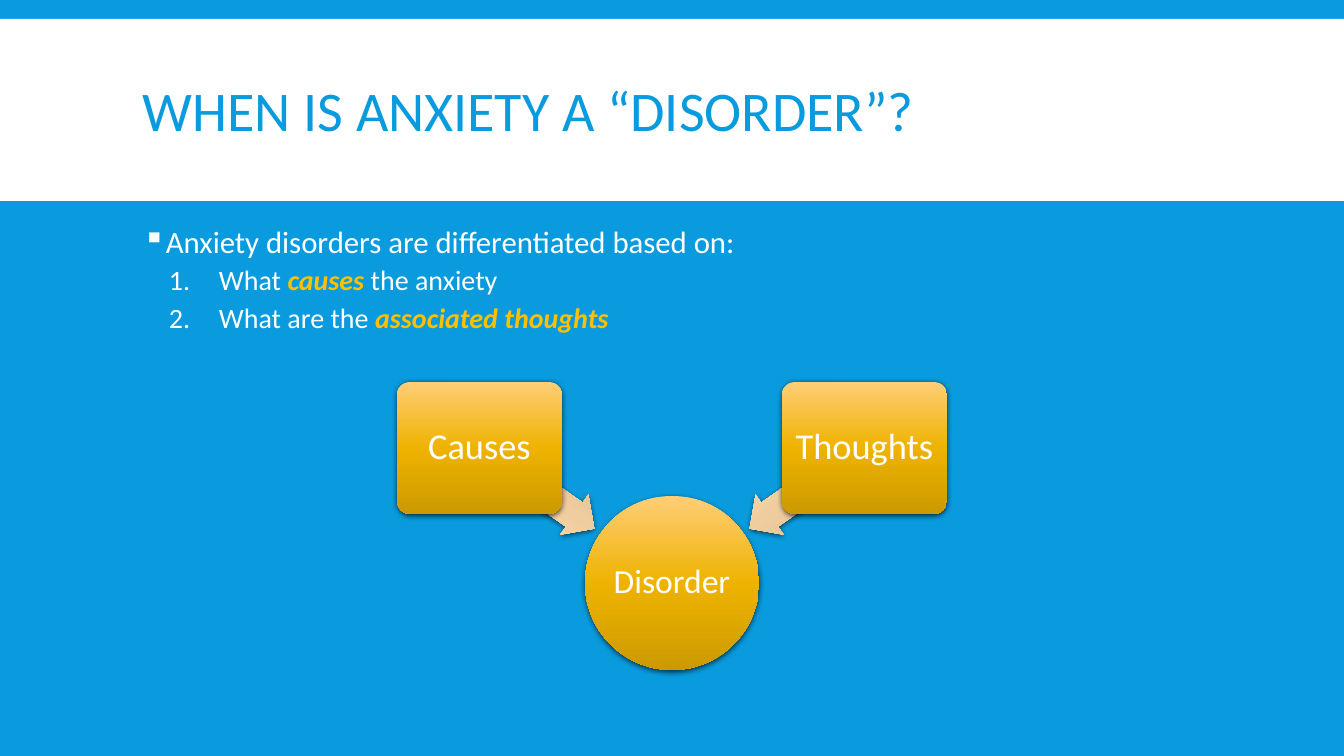
from pptx import Presentation
from pptx.dml.color import RGBColor
from pptx.enum.shapes import MSO_SHAPE as Preset
from pptx.enum.text import MSO_ANCHOR as Anchor, PP_ALIGN as Align
from pptx.oxml import parse_xml
from pptx.oxml.ns import nsdecls
from pptx.util import Emu, Pt

BLUE = RGBColor(0x09, 0x9B, 0xDD)
WHITE = RGBColor(0xFF, 0xFF, 0xFF)
AMBER = RGBColor(0xFF, 0xC0, 0x00)
GOLD_STOPS = [RGBColor(0xFF, 0xCE, 0x77), RGBColor(0xEE, 0xB3, 0x00), RGBColor(0xCC, 0x9A, 0x00)]
SAND_STOPS = [RGBColor(0xFF, 0xE6, 0xC4), RGBColor(0xF0, 0xCD, 0x9E), RGBColor(0xD3, 0xB1, 0x82)]
SQUARE_BULLET = '<a:buChar {} char="▪"/>'
NUMBER_BULLET = '<a:buAutoNum {} type="arabicPeriod"/>'


def px(length):
    return Emu(round(length * 914400 / 100.8))


class SlideBuilder:
    font = "Calibri"

    def __init__(self, deck):
        self.slide = deck.slides.add_slide(deck.slide_layouts[6])

    def background(self, color):
        fill = self.slide.background.fill
        fill.solid()
        fill.fore_color.rgb = color

    def band(self, left, top, width, height, color):
        box = self.slide.shapes.add_shape(Preset.RECTANGLE, px(left), px(top), px(width), px(height))
        box.shadow.inherit = False
        box.fill.solid()
        box.fill.fore_color.rgb = color
        box.line.fill.background()

    def text_box(self, left, top, width, height, anchor=Anchor.TOP):
        box = self.slide.shapes.add_textbox(px(left), px(top), px(width), px(height))
        box.text_frame.word_wrap = True
        box.text_frame.vertical_anchor = anchor
        return box.text_frame

    def span(self, para, text, size, color=WHITE, strong=False):
        span = para.add_run()
        span.text = text
        font = span.font
        font.name, font.size, font.color.rgb = self.font, Pt(size), color
        font.bold = font.italic = strong

    def bullet(self, para, kind, margin, hanging, before, after):
        para.line_spacing = 0.9
        para.space_before, para.space_after = Pt(before), Pt(after)
        props = para._p.get_or_add_pPr()
        props.set("marL", str(px(margin)))
        props.set("indent", str(px(-hanging)))
        props.append(parse_xml(f'<a:buClr {nsdecls("a")}><a:srgbClr val="{WHITE}"/></a:buClr>'))
        props.append(parse_xml(kind.format(nsdecls("a"))))

    def glossy(self, preset, left, top, width, height, stops, adjustments=(), rotation=0):
        """Shape with a three-stop vertical gradient and a soft shadow."""
        shape = self.slide.shapes.add_shape(preset, px(left), px(top), px(width), px(height))
        shape.rotation = rotation
        for index, value in enumerate(adjustments):
            shape.adjustments[index] = value
        shape.line.fill.background()
        shape.fill.gradient()
        shape.fill.gradient_angle = 270
        props = shape._element.spPr
        stop_list = props.find(".//{*}gsLst")
        for old_stop in list(stop_list):
            stop_list.remove(old_stop)
        for index, color in enumerate(stops):
            stop_list.append(parse_xml(
                f'<a:gs {nsdecls("a")} pos="{index * 50000}"><a:srgbClr val="{color}"/></a:gs>'))
        shape.shadow.inherit = False
        props.find("{*}effectLst").append(parse_xml(
            f'<a:outerShdw {nsdecls("a")} blurRad="{Pt(4)}" dist="{Pt(1.2)}" dir="5400000" '
            'algn="ctr" rotWithShape="0"><a:srgbClr val="000000"><a:alpha val="68000"/>'
            '</a:srgbClr></a:outerShdw>'))
        return shape

    def label(self, shape, text, size):
        frame = shape.text_frame
        frame.word_wrap = False
        frame.vertical_anchor = Anchor.MIDDLE
        frame.margin_left = frame.margin_right = frame.margin_top = frame.margin_bottom = px(5)
        para = frame.paragraphs[0]
        para.alignment = Align.CENTER
        para.line_spacing = 0.9
        self.span(para, text, size)


def main():
    deck = Presentation()
    deck.slide_width, deck.slide_height = px(1344), px(756)
    page = SlideBuilder(deck)
    page.background(BLUE)

    # Title band
    page.band(0, 19, 1344, 182, WHITE)
    title = page.text_box(133, 31, 1079, 166, Anchor.MIDDLE).paragraphs[0]
    title.line_spacing = 0.85
    page.span(title, "WHEN IS ANXIETY A “DISORDER”?", 40, BLUE)

    # Bulleted statement with its numbered points
    body = page.text_box(133, 222, 1079, 464)
    lead = body.paragraphs[0]
    page.bullet(lead, SQUARE_BULLET, 20, 20, 12, 2)
    page.span(lead, "Anxiety disorders are differentiated based on:", 22)
    points = [("What ", "causes", " the anxiety"), ("What are the ", "associated thoughts", "")]
    for start, emphasis, end in points:
        para = body.add_paragraph()
        page.bullet(para, NUMBER_BULLET, 76, 50, 2, 4)
        page.span(para, start, 20)
        page.span(para, emphasis, 20, AMBER, strong=True)
        if end:
            page.span(para, end, 20)

    # Diagram: two factors pointing at the disorder
    disorder = page.glossy(Preset.OVAL, 585, 496, 174, 174, GOLD_STOPS)
    page.label(disorder, "Disorder", 24)
    factors = [("Causes", 397, 467, 215), ("Thoughts", 782, 737, 325)]
    for name, box_left, arrow_left, rotation in factors:
        page.glossy(Preset.LEFT_ARROW, arrow_left, 464, 140, 49, SAND_STOPS, (0.6, 0.5), rotation)
        factor = page.glossy(Preset.ROUNDED_RECTANGLE, box_left, 382, 165, 132, GOLD_STOPS, (0.1,))
        page.label(factor, name, 26)

    deck.save("out.pptx")


if __name__ == "__main__":
    main()
